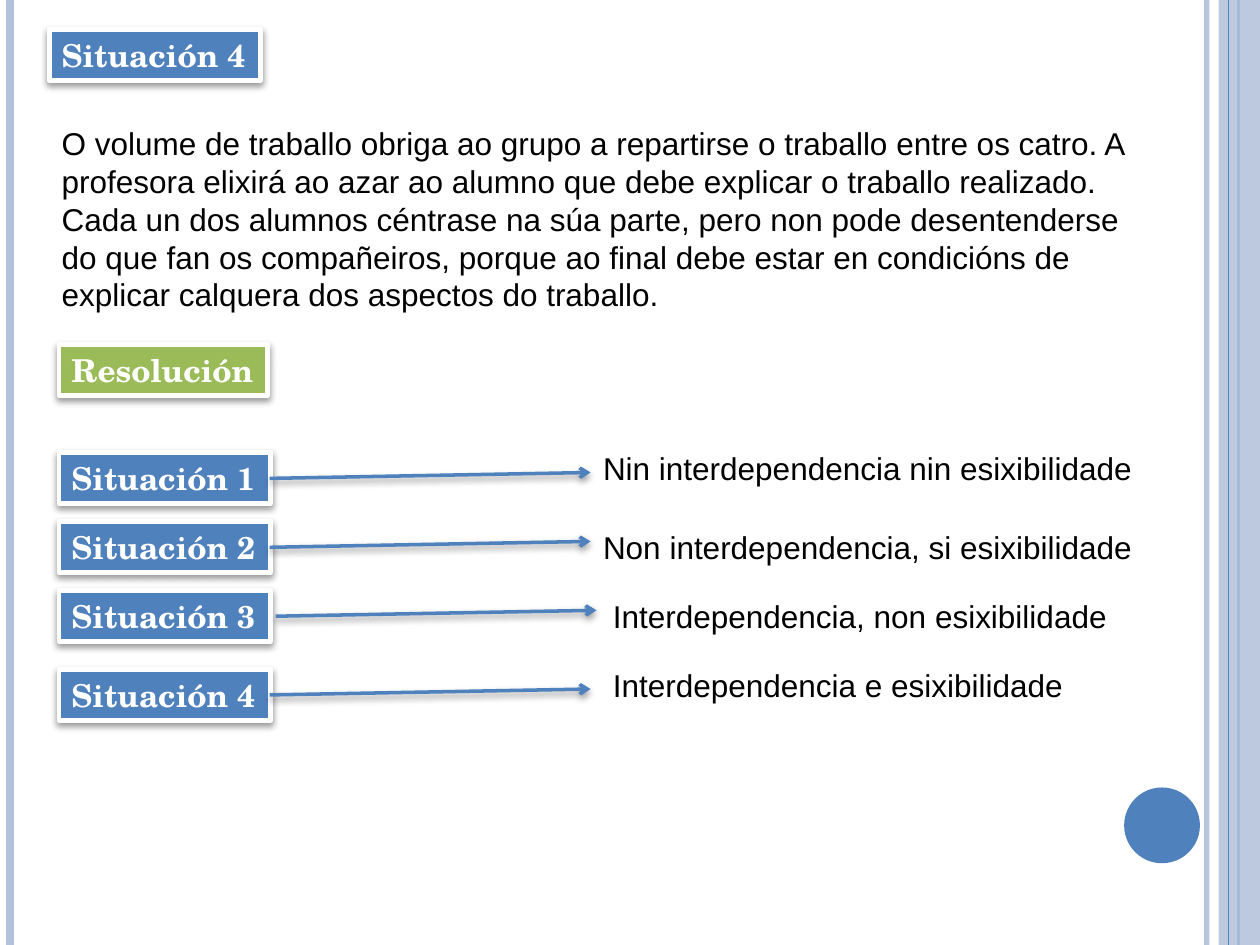
from dataclasses import dataclass

from lxml.etree import SubElement
from pptx import Presentation
from pptx.dml.color import RGBColor
from pptx.enum.shapes import MSO_CONNECTOR as Link, MSO_SHAPE as Preset
from pptx.enum.text import MSO_ANCHOR as Anchor, MSO_AUTO_SIZE as Fit, PP_ALIGN as Align
from pptx.oxml.ns import qn
from pptx.util import Inches, Pt

COLUMNS, ROWS = 128, 96
UNIT = Inches(10) / COLUMNS
LABEL_HEIGHT = 5.17


@dataclass(frozen=True)
class Theme:
    """Colours, fonts and sizes of the slide."""
    blue: str = "4F81BD"
    pale: str = "B3C1DB"
    green: str = "9BBB59"
    white: str = "FFFFFF"
    black: str = "000000"
    label_font: str = "TeX Gyre Schola"
    body_font: str = "Arial"
    size: float = 18
    border: float = 2.75
    arrow: float = 2


THEME = Theme()


def grid(*cells):
    """Turn grid units into slide lengths."""
    return [round(cell * UNIT) for cell in cells]


def set_alpha(fill, percent):
    """Make a solid fill or line partly transparent."""
    color = next(fill._xPr.iter(qn("a:srgbClr")))
    SubElement(color, qn("a:alpha"), val=str(percent * 1000))


def add_effects(part, shadow=False):
    """Replace the theme effect by a soft drop shadow or by nothing."""
    effects = SubElement(part._element.spPr, qn("a:effectLst"))
    if shadow:
        outer = SubElement(effects, qn("a:outerShdw"), blurRad=str(Pt(4)), dist=str(Pt(2)),
                           dir="5400000", rotWithShape="0")
        color = SubElement(outer, qn("a:srgbClr"), val=THEME.black)
        SubElement(color, qn("a:alpha"), val="40000")


def add_line(shapes, start, end, color, width, arrow=False):
    """Draw a line between two grid points."""
    line = shapes.add_connector(Link.STRAIGHT, *grid(*start, *end))
    line.line.color.rgb = RGBColor.from_string(color)
    line.line.width = Pt(width)
    if arrow:
        SubElement(line.line._get_or_add_ln(), qn("a:tailEnd"), type="arrow")
    add_effects(line, shadow=arrow)
    return line


def add_solid(shapes, preset, box, color):
    """Draw a borderless filled shape in a grid box."""
    solid = shapes.add_shape(preset, *grid(*box))
    solid.fill.solid()
    solid.fill.fore_color.rgb = RGBColor.from_string(color)
    solid.line.fill.background()
    return solid


def write(holder, text, font, color, bold=False, wrap=False):
    """Write one left-aligned paragraph into a shape."""
    frame = holder.text_frame
    frame.word_wrap = wrap
    frame.auto_size = Fit.SHAPE_TO_FIT_TEXT
    frame.vertical_anchor = Anchor.TOP
    paragraph = frame.paragraphs[0]
    paragraph.text = text
    paragraph.alignment = Align.LEFT
    paragraph.font.name = font
    paragraph.font.size = Pt(THEME.size)
    paragraph.font.bold = bold
    paragraph.font.color.rgb = RGBColor.from_string(color)


def add_label(shapes, left, top, text, color=THEME.blue, width=21.5):
    """Place a framed label with a shadow."""
    label = add_solid(shapes, Preset.RECTANGLE, (left, top, width, LABEL_HEIGHT), color)
    label.line.color.rgb = RGBColor.from_string(THEME.white)
    label.line.width = Pt(THEME.border)
    add_effects(label, shadow=True)
    write(label, text, THEME.label_font, THEME.white, bold=True)


def add_text(shapes, box, text, wrap=False):
    """Place plain text in a grid box."""
    passage = shapes.add_textbox(*grid(*box))
    write(passage, text, THEME.body_font, THEME.black, wrap=wrap)


def add_frame(shapes, box):
    """Draw the side rules, the right band and the disc."""
    left, top, width, height = box
    right, bottom = left + width, top + height

    def rule(x, color, weight):
        return add_line(shapes, (x, top), (x, bottom), color, weight)

    set_alpha(rule(right - 5.4, THEME.pale, 3).line.fill, 93)
    rule(left + 1, THEME.pale, 4.5)
    rule(right - 2.2, THEME.blue, 1.5)
    band = add_solid(shapes, Preset.RECTANGLE, (right - 4.2, top, 4.2, height), THEME.pale)
    set_alpha(band.fill, 87)
    rule(right - 3.2, THEME.blue, 0.75)
    disc = add_solid(shapes, Preset.OVAL, (right - 13.8, bottom - 16, 7.7, 7.7), THEME.blue)
    for part in (band, disc):
        part.shadow.inherit = False


def add_situation(shapes, box):
    """Place the heading and the description of the situation."""
    left, top, width, height = box
    add_text(shapes, (left, top + 9, width, height - 9),
             "O volume de traballo obriga ao grupo a repartirse o traballo entre os catro. "
             "A profesora elixirá ao azar ao alumno que debe explicar o traballo realizado. "
             "Cada un dos alumnos céntrase na súa parte, pero non pode desentenderse do que "
             "fan os compañeiros, porque ao final debe estar en condicións de explicar "
             "calquera dos aspectos do traballo.", wrap=True)
    add_label(shapes, left, top, "Situación 4")


def add_resolution(shapes, box):
    """Place the resolution heading and match each situation with its answer."""
    left, top = box[:2]
    add_label(shapes, left, top, "Resolución", THEME.green, 21.2)
    answers = [
        (11, 0, 10, 54, 57, "Nin interdependencia nin esixibilidade"),
        (18, 0, 18, 54, 57, "Non interdependencia, si esixibilidade"),
        (25, 0.6, 25, 55, 53.4, "Interdependencia, non esixibilidade"),
        (33, 0, 32, 55, 48.9, "Interdependencia e esixibilidade"),
    ]
    for number, (row, shift, answer_row, column, width, answer) in enumerate(answers, 1):
        pair = shapes.add_group_shape().shapes
        add_label(pair, left, top + row, f"Situación {number}")
        add_line(pair, (left + 21.4 + shift, top + row + 2.6),
                 (left + 54 + shift, top + row + 2), THEME.blue, THEME.arrow, arrow=True)
        add_text(shapes, (left + column, top + answer_row, width, LABEL_HEIGHT), answer)


def main():
    """Build and save the slide."""
    deck = Presentation()
    deck.slide_width, deck.slide_height = grid(COLUMNS, ROWS)
    shapes = deck.slides.add_slide(deck.slide_layouts[6]).shapes
    add_frame(shapes, (0, 0, COLUMNS, ROWS))
    add_situation(shapes, (5, 3, 111, 29.7))
    add_resolution(shapes, (6, 35, 111, 38.2))
    deck.save("out.pptx")


if __name__ == "__main__":
    main()
